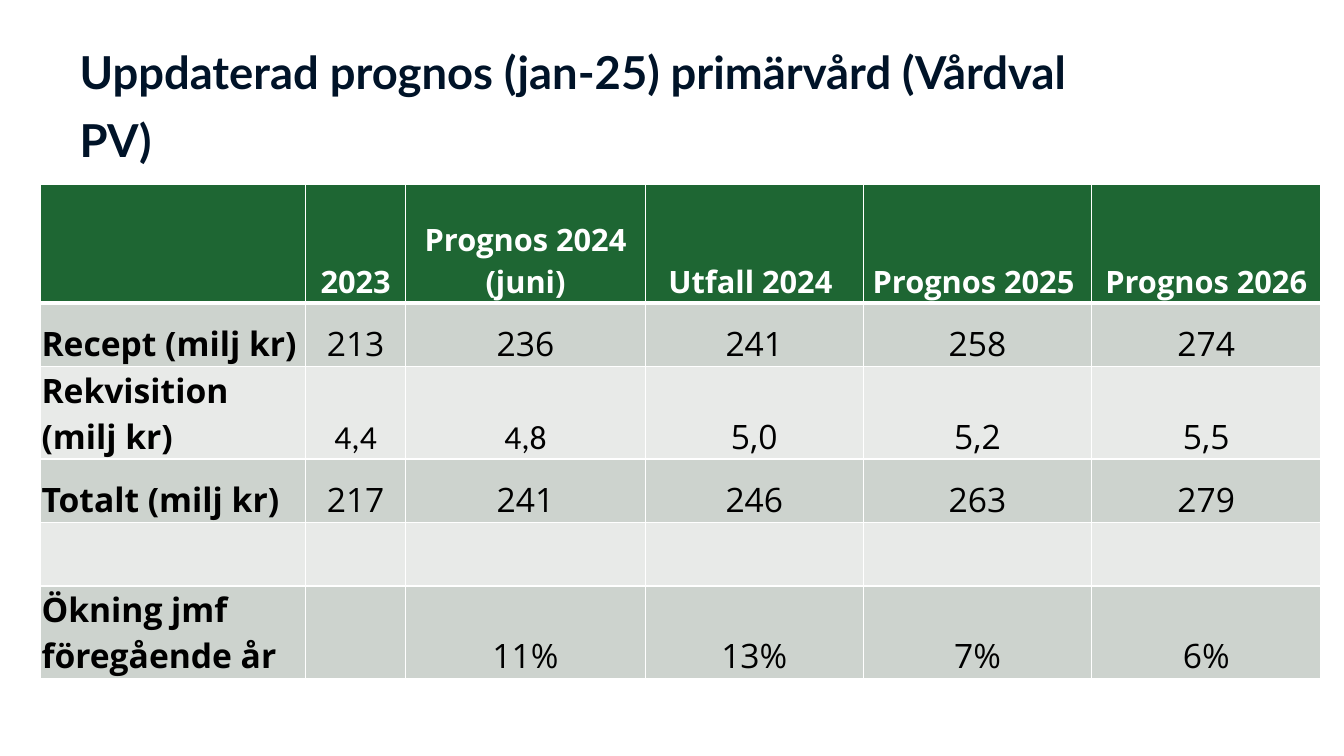
from dataclasses import dataclass

from lxml.etree import SubElement
from pptx import Presentation
from pptx.dml.color import RGBColor
from pptx.enum.text import MSO_ANCHOR as Anchor, MSO_AUTO_SIZE as AutoSize, PP_ALIGN as Align
from pptx.oxml.ns import qn
from pptx.slide import Slide
from pptx.table import Table, _Cell as Cell
from pptx.text.text import Font
from pptx.util import Pt

COLORS = {
    "title": "001328",
    "header": "1E6633",
    "dark_band": "CDD3CE",
    "light_band": "E8EAE8",
    "white": "FFFFFF",
    "black": "000000",
}
COLUMN_WIDTHS = [189.4, 71.3, 171.4, 155.5, 163.4, 163.4]


@dataclass
class TableRow:
    texts: list[str]
    fill: str = "dark_band"
    color: str = "black"
    size: float = 24
    height: float = 45.4
    top_line: float = 1
    bottom_line: float = 1
    all_bold: bool = False
    calibri_columns: tuple[int, ...] = ()


ROWS = [
    TableRow(
        ["", "2023", "Prognos 2024 (juni)", "Utfall 2024 ", "Prognos 2025 ", "Prognos 2026"],
        fill="header", color="white", size=22, height=84.2, bottom_line=3, all_bold=True,
    ),
    TableRow(["Recept (milj kr)", "213", "236", "241", "258", "274"], top_line=3),
    TableRow(
        ["Rekvisition\n(milj kr)", "4,4", "4,8", "5,0", "5,2", "5,5"],
        fill="light_band", calibri_columns=(1, 2),
    ),
    TableRow(["Totalt (milj kr)", "217", "241", "246", "263", "279"]),
    TableRow([""] * 6, fill="light_band"),
    TableRow(["Ökning jmf föregående år", "", "11%", "13%", "7%", "6%"]),
]


def style_font(font: Font, name: str, size: float, color: str, bold: bool) -> None:
    font.name = name
    font.size = Pt(size)
    font.bold = bold
    font.color.rgb = RGBColor.from_string(COLORS[color])


def draw_borders(cell: Cell, top: float, bottom: float) -> None:
    properties = cell._tc.get_or_add_tcPr()
    for side, width in {"lnL": 1, "lnR": 1, "lnT": top, "lnB": bottom}.items():
        line = SubElement(properties, qn(f"a:{side}"), w=str(Pt(width)))
        fill = SubElement(line, qn("a:solidFill"))
        SubElement(fill, qn("a:srgbClr"), val=COLORS["white"])


def fill_cell(cell: Cell, row: TableRow, column: int) -> None:
    draw_borders(cell, row.top_line, row.bottom_line)
    cell.fill.solid()
    cell.fill.fore_color.rgb = RGBColor.from_string(COLORS[row.fill])
    cell.vertical_anchor = Anchor.BOTTOM
    cell.margin_left = cell.margin_right = cell.margin_top = Pt(0.7)
    cell.margin_bottom = Pt(0)
    cell.text_frame.text = row.texts[column]
    font_name = "Calibri" if column in row.calibri_columns else "Open Sans"
    for para in cell.text_frame.paragraphs:
        para.alignment = Align.CENTER if column else Align.LEFT
        for span in para.runs:
            style_font(span.font, font_name, row.size, row.color, row.all_bold or column == 0)


def add_forecast_table(page: Slide) -> None:
    frame = page.shapes.add_table(
        len(ROWS), len(COLUMN_WIDTHS), Pt(29), Pt(132),
        Pt(sum(COLUMN_WIDTHS)), Pt(sum(row.height for row in ROWS)),
    )
    table: Table = frame.table
    for column, width in zip(table.columns, COLUMN_WIDTHS):
        column.width = Pt(width)
    for row_index, row in enumerate(ROWS):
        table.rows[row_index].height = Pt(row.height)
        for column_index in range(len(COLUMN_WIDTHS)):
            fill_cell(table.cell(row_index, column_index), row, column_index)


def set_title(page: Slide) -> None:
    title = page.shapes.title
    title.left, title.top, title.width, title.height = Pt(49.7), Pt(18), Pt(761.8), Pt(104.4)
    box = title.text_frame
    box.text = "Uppdaterad prognos (jan-25) primärvård (Vårdval PV)"
    box.word_wrap = True
    box.auto_size = AutoSize.NONE
    box.vertical_anchor = Anchor.MIDDLE
    para = box.paragraphs[0]
    para.alignment = Align.LEFT
    para.line_spacing = 1.25
    style_font(para.runs[0].font, "Lato", 32.4, "title", True)


def main() -> None:
    deck = Presentation()
    deck.slide_width, deck.slide_height = Pt(960), Pt(540)
    page = deck.slides.add_slide(deck.slide_layouts[5])
    set_title(page)
    add_forecast_table(page)
    deck.save("out.pptx")


if __name__ == "__main__":
    main()
